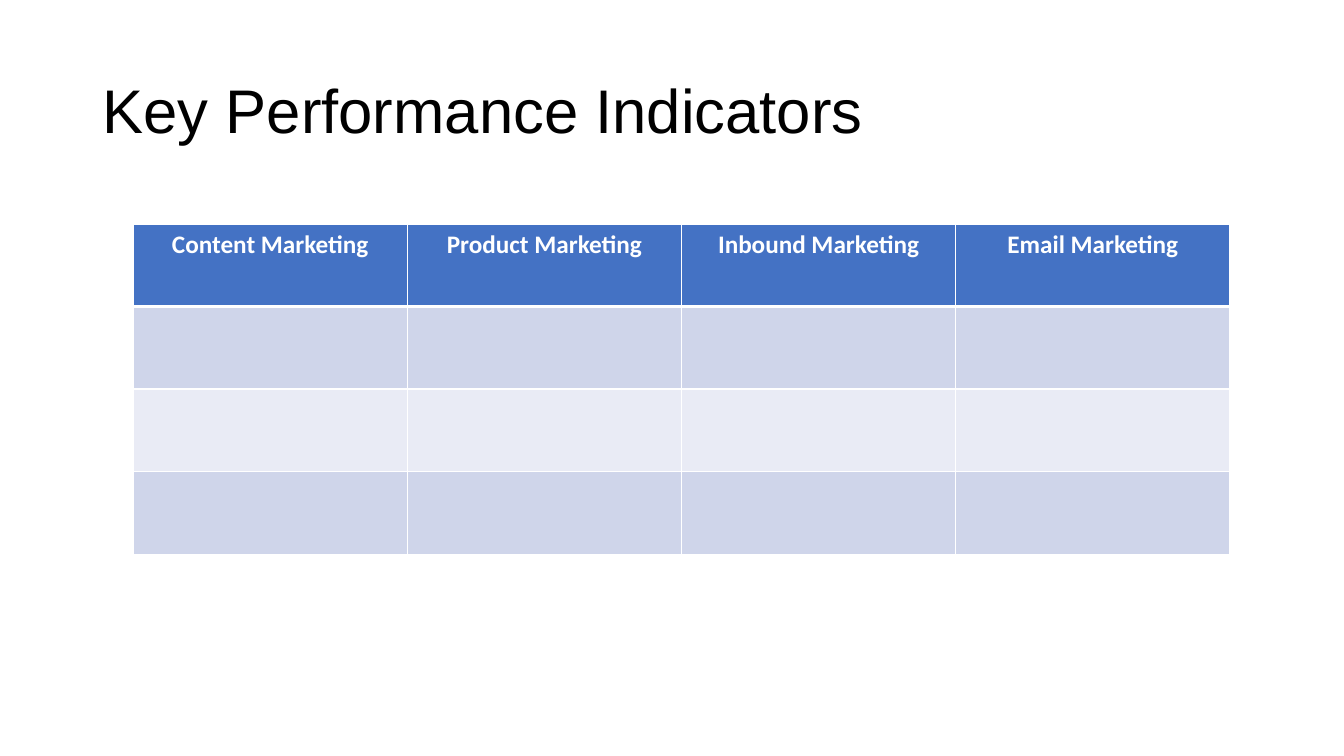
from lxml.etree import SubElement
from pptx import Presentation
from pptx.dml.color import RGBColor
from pptx.enum.text import MSO_ANCHOR, PP_ALIGN
from pptx.oxml.ns import qn
from pptx.util import Inches, Pt

TITLE = "Key Performance Indicators"
HEADERS = ["Content Marketing", "Product Marketing", "Inbound Marketing", "Email Marketing"]
ROW_FILLS = ["4472C4", "CFD5EA", "E9EBF5", "CFD5EA"]
WHITE, BLACK = "FFFFFF", "000000"
LEFT, TOP, COL_W = 1.32, 2.23, 2.72
ROW_H = [0.81, 0.82, 0.82, 0.82]
THIN, THICK = 1, 3


def rgb(value):
    return RGBColor.from_string(value)


def write(tf, text, size, font, color, bold=False, align=PP_ALIGN.LEFT, spacing=1.0):
    p = tf.paragraphs[0]
    p.alignment, p.line_spacing = align, spacing
    r = p.add_run()
    r.text = text
    r.font.size, r.font.name, r.font.bold = Pt(size), font, bold
    r.font.color.rgb = rgb(color)


def set_borders(cell, **widths):
    tc_pr = cell._tc.get_or_add_tcPr()
    for side, width in widths.items():
        ln = SubElement(tc_pr, qn(f"a:ln{side}"), w=str(Pt(width)))
        SubElement(SubElement(ln, qn("a:solidFill")), qn("a:srgbClr"), val=WHITE)


def add_title(s):
    tf = s.shapes.add_textbox(Inches(0.92), Inches(0.4), Inches(11.5), Inches(1.45)).text_frame
    tf.word_wrap = True
    tf.vertical_anchor = MSO_ANCHOR.MIDDLE
    write(tf, TITLE, 44, "Arial", BLACK, spacing=0.9)


def add_kpi_table(s):
    rows, cols = len(ROW_H), len(HEADERS)
    table = s.shapes.add_table(rows, cols, Inches(LEFT), Inches(TOP),
                               Inches(COL_W * cols), Inches(sum(ROW_H))).table
    for col in table.columns:
        col.width = Inches(COL_W)
    for i, (height, fill) in enumerate(zip(ROW_H, ROW_FILLS)):
        table.rows[i].height = Inches(height)
        for cell in table.rows[i].cells:
            set_borders(cell, L=THIN, R=THIN, T=THICK if i == 1 else THIN,
                        B=THICK if i == 0 else THIN)
            cell.fill.solid()
            cell.fill.fore_color.rgb = rgb(fill)
    for cell, header in zip(table.rows[0].cells, HEADERS):
        write(cell.text_frame, header, 18, "Calibri", WHITE, bold=True, align=PP_ALIGN.CENTER)


def main():
    """Build the key performance indicators slide."""
    prs = Presentation()
    prs.slide_width, prs.slide_height = Inches(13.33), Inches(7.5)
    s = prs.slides.add_slide(prs.slide_layouts[6])
    add_title(s)
    add_kpi_table(s)
    prs.save("out.pptx")


if __name__ == "__main__":
    main()
